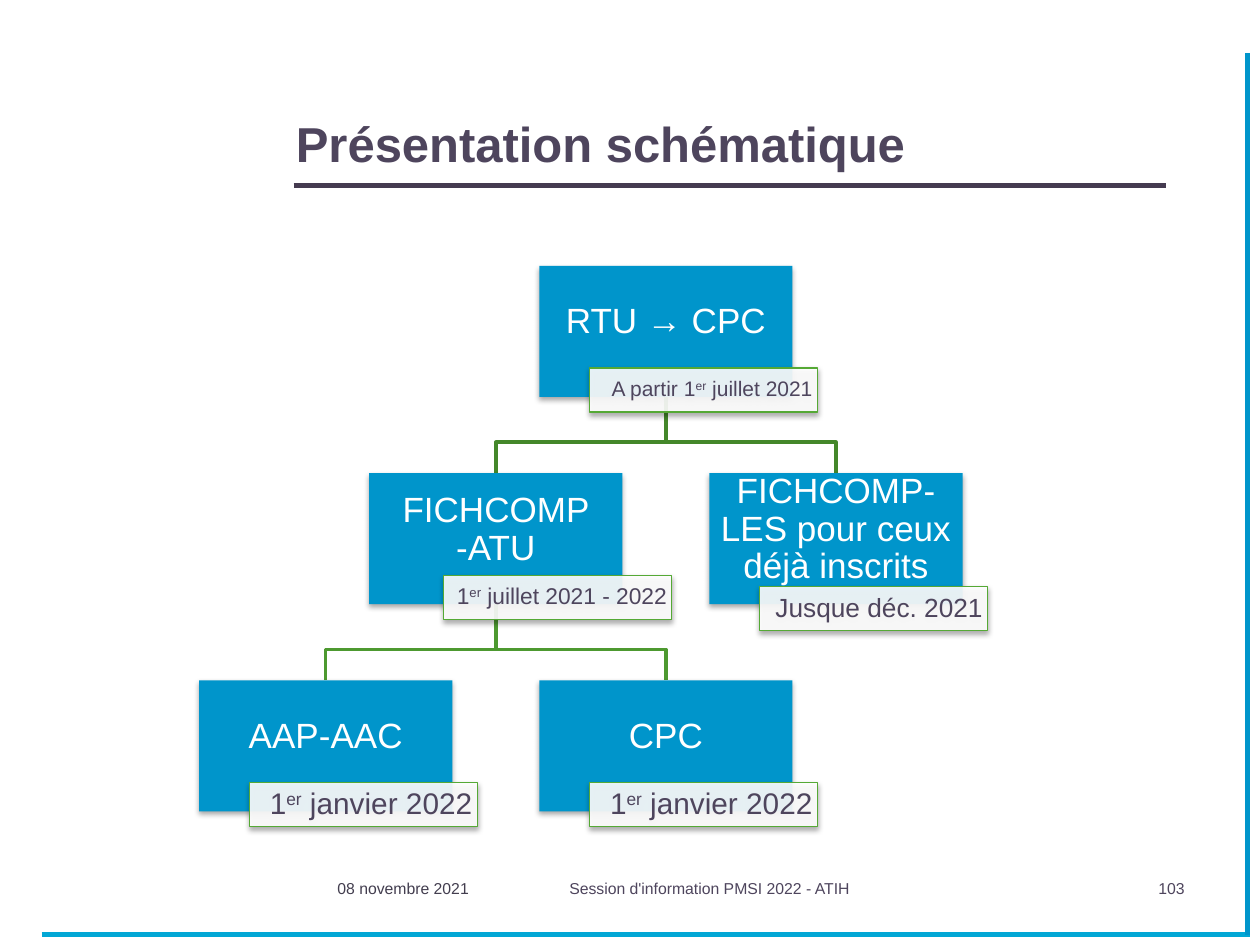
import dataclasses
import typing

import lxml.etree
import pptx
import pptx.dml.color
import pptx.enum.shapes
import pptx.enum.text
import pptx.oxml.ns
import pptx.util

ALIGN = pptx.enum.text.PP_ALIGN
ANCHOR = pptx.enum.text.MSO_ANCHOR
RECTANGLE = pptx.enum.shapes.MSO_SHAPE.RECTANGLE
STRAIGHT = pptx.enum.shapes.MSO_CONNECTOR.STRAIGHT
inches = pptx.util.Inches

WIDTH, HEIGHT = 10, 7.5
LEFT, TOP = 1.58, 2.11
COLUMN, ROW = 1.35, 1.645
STEP_WIDTH, STEP_HEIGHT = 2.01, 1.04
DATE_WIDTH, DATE_HEIGHT = 1.81, 0.35
ELBOW_DROP = 0.36
BLUE, CYAN, PLUM, INK, GREEN, WHITE = "0095CB", "02A7D5", "453B50", "4E455D", "55A935", "FFFFFF"


@dataclasses.dataclass(frozen=True)
class Step:
    """A box of the tree, with the date tag over its lower edge."""

    label: str
    column: int
    row: int
    date: str
    date_size: float
    shift: float = 0.4
    drop: float = 0.81

    @property
    def left(self) -> float:
        return LEFT + self.column * COLUMN

    @property
    def top(self) -> float:
        return TOP + self.row * ROW

    @property
    def middle(self) -> float:
        return self.left + STEP_WIDTH / 2


@dataclasses.dataclass(frozen=True)
class Branch:
    """An elbow between two steps."""

    parent: Step
    child: Step
    color: str


@dataclasses.dataclass(frozen=True)
class Rule:
    """A frame line whose ends are shares of the slide."""

    start: tuple[float, float]
    end: tuple[float, float]
    color: str


@dataclasses.dataclass(frozen=True)
class Caption:
    """A free text whose box is given in shares of the slide."""

    text: str
    box: tuple[float, float, float, float]
    size: float = 9
    color: str = INK
    bold: bool = False
    align: typing.Any = ALIGN.LEFT
    anchor: typing.Any = ANCHOR.TOP


SWITCH = Step("RTU → CPC", 2, 0, "A partir 1^er^ juillet 2021", 12)
ATU = Step("FICHCOMP -ATU", 1, 1, "1^er^ juillet 2021 - 2022", 13, shift=0.59)
AAP = Step("AAP-AAC", 0, 2, "1^er^ janvier 2022", 17)
CPC = Step("CPC", 2, 2, "1^er^ janvier 2022", 17)
LES = Step("FICHCOMP-LES pour ceux déjà inscrits", 3, 1, "Jusque déc. 2021", 15, drop=0.9)
STEPS = (SWITCH, ATU, AAP, CPC, LES)
BRANCHES = (
    Branch(SWITCH, LES, "44872A"),
    Branch(ATU, CPC, "4D9930"),
    Branch(ATU, AAP, "4D9930"),
    Branch(SWITCH, ATU, "44872A"),
)
RULES = (
    Rule((0.233, 0.196), (0.925, 0.196), PLUM),
    Rule((0.033, 0.989), (0.992, 0.989), CYAN),
    Rule((0.99, 0.989), (0.99, 0.056), BLUE),
)
CAPTIONS = (
    Caption("Présentation schématique", (0.225, 0.044, 0.667, 0.145), 28, bold=True, anchor=ANCHOR.BOTTOM),
    Caption("103", (0.767, 0.923, 0.183, 0.059), align=ALIGN.RIGHT),
    Caption("08 novembre 2021", (0.258, 0.923, 0.167, 0.067), color="433E4F"),
    Caption("Session d'information PMSI 2022 - ATIH", (0.442, 0.923, 0.317, 0.067)),
)


def rgb(color: str) -> pptx.dml.color.RGBColor:
    """Turn a hex string into a colour."""
    return pptx.dml.color.RGBColor.from_string(color)


def apply(target: typing.Any, values: dict[str, typing.Any]) -> None:
    """Set each attribute of a format object."""
    for attribute, value in values.items():
        setattr(target, attribute, value)


def add_child(parent: typing.Any, tag: str, **attributes: str) -> typing.Any:
    """Append a drawing element."""
    return lxml.etree.SubElement(parent, pptx.oxml.ns.qn(tag), attributes)


def write(frame: typing.Any, text: str, size: float, color: str, align: typing.Any, bold: bool = False) -> None:
    """Write one paragraph, raising every part held between carets."""
    paragraph = frame.paragraphs[0]
    paragraph.alignment = align
    for index, part in enumerate(text.split("^")):
        run = paragraph.add_run()
        run.text = part
        apply(run.font, {"size": pptx.util.Pt(size), "name": "Arial", "bold": bold})
        run.font.color.rgb = rgb(color)
        if index % 2:
            run.font._element.set("baseline", "30000")


def draw_rule(shapes: typing.Any, rule: Rule) -> None:
    """Draw a frame line."""
    ends = [inches(share * side) for point in (rule.start, rule.end) for share, side in zip(point, (WIDTH, HEIGHT))]
    connector = shapes.add_connector(STRAIGHT, *ends)
    connector.line.color.rgb = rgb(rule.color)
    connector.line.width = pptx.util.Pt(3.06)
    add_child(connector._element.spPr, "a:effectLst")


def draw_caption(shapes: typing.Any, caption: Caption) -> None:
    """Draw a free text."""
    box = [inches(share * side) for share, side in zip(caption.box, (WIDTH, HEIGHT) * 2)]
    frame = shapes.add_textbox(*box).text_frame
    apply(frame, {"word_wrap": True, "vertical_anchor": caption.anchor})
    write(frame, caption.text, caption.size, caption.color, caption.align, caption.bold)


def draw_branch(shapes: typing.Any, branch: Branch) -> None:
    """Draw an elbow from the foot of a step to the head of the next."""
    start, end = branch.parent.middle, branch.child.middle
    foot = branch.parent.top + STEP_HEIGHT
    bend = foot + ELBOW_DROP
    builder = shapes.build_freeform(inches(start), inches(foot))
    corners = ((start, bend), (end, bend), (end, branch.child.top))
    builder.add_line_segments([(inches(x), inches(y)) for x, y in corners], close=False)
    elbow = builder.convert_to_shape()
    elbow.fill.background()
    elbow.line.color.rgb = rgb(branch.color)
    elbow.line.width = pptx.util.Pt(2)
    elbow.shadow.inherit = False


def draw_panel(shapes: typing.Any, box: tuple[float, ...], fill: str, side: float, foot: float) -> typing.Any:
    """Draw a rectangle with a soft shadow, ready for text."""
    panel = shapes.add_shape(RECTANGLE, *map(inches, box))
    panel.fill.solid()
    panel.fill.fore_color.rgb = rgb(fill)
    panel.line.fill.background()
    panel.shadow.inherit = False
    effects = panel._element.spPr.find(pptx.oxml.ns.qn("a:effectLst"))
    shadow = add_child(effects, "a:outerShdw", blurRad="40000", dist="23000", dir="5400000", rotWithShape="0")
    add_child(add_child(shadow, "a:srgbClr", val="000000"), "a:alpha", val="35000")
    margins = {"margin_left": side, "margin_right": side, "margin_top": 0.01, "margin_bottom": foot}
    apply(panel.text_frame, {name: inches(value) for name, value in margins.items()})
    apply(panel.text_frame, {"word_wrap": True, "vertical_anchor": ANCHOR.MIDDLE})
    panel.text_frame.paragraphs[0].line_spacing = 0.9
    return panel


def draw_step(shapes: typing.Any, step: Step) -> None:
    """Draw a step and its date tag."""
    box = draw_panel(shapes, (step.left, step.top, STEP_WIDTH, STEP_HEIGHT), BLUE, 0.01, 0.15)
    write(box.text_frame, step.label, 20, WHITE, ALIGN.CENTER)
    place = (step.left + step.shift, step.top + step.drop, DATE_WIDTH, DATE_HEIGHT)
    tag = draw_panel(shapes, place, WHITE, 0.04, 0.01)
    tag.line.color.rgb = rgb(GREEN)
    tag.line.width = pptx.util.Pt(0.75)
    tint = tag._element.spPr.find(pptx.oxml.ns.qn("a:solidFill"))[0]
    add_child(tint, "a:alpha", val="90000")
    write(tag.text_frame, step.date, step.date_size, INK, ALIGN.RIGHT)


def main() -> None:
    """Build the slide."""
    deck = pptx.Presentation()
    apply(deck, {"slide_width": inches(WIDTH), "slide_height": inches(HEIGHT)})
    shapes = deck.slides.add_slide(deck.slide_layouts[6]).shapes
    for draw, parts in (
        (draw_rule, RULES), (draw_caption, CAPTIONS), (draw_branch, BRANCHES), (draw_step, STEPS)
    ):
        for part in parts:
            draw(shapes, part)
    deck.save("out.pptx")


if __name__ == "__main__":
    main()
